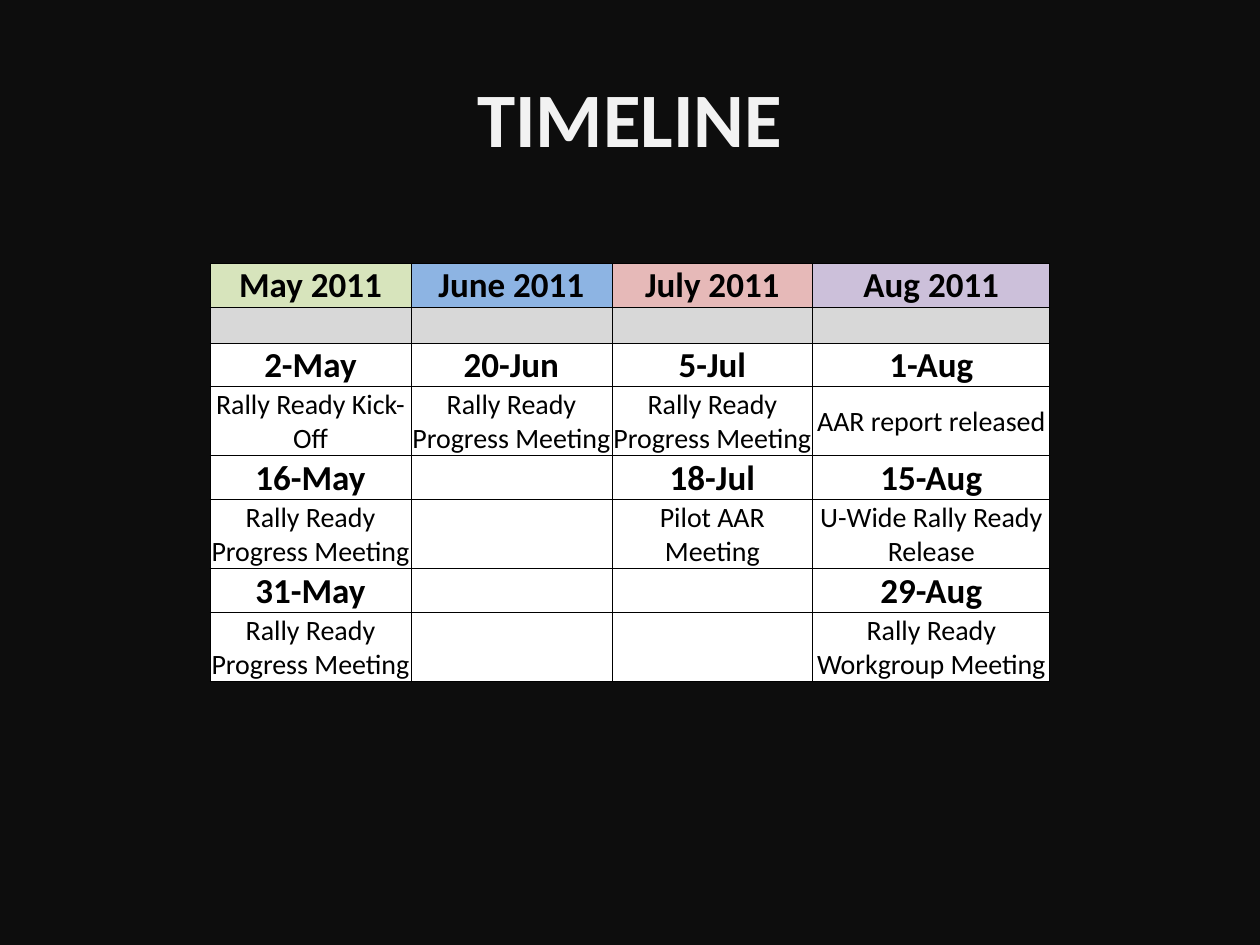
"""Build a timeline slide: a title above a four-month meeting table."""
from dataclasses import dataclass

from lxml.etree import SubElement
from pptx import Presentation
from pptx.dml.color import RGBColor
from pptx.enum.text import MSO_ANCHOR, PP_ALIGN
from pptx.oxml.ns import qn
from pptx.util import Emu, Pt

TITLE = "TIMELINE"
MEETING = "Rally Ready Progress Meeting"
MONTHS = [
    ("May 2011", "D7E4BC"),
    ("June 2011", "8DB4E3"),
    ("July 2011", "E6B9B8"),
    ("Aug 2011", "CCC0DA"),
]
EVENTS = [
    (["2-May", "20-Jun", "5-Jul", "1-Aug"],
     ["Rally Ready Kick-Off", MEETING, MEETING, "AAR report released"]),
    (["16-May", "", "18-Jul", "15-Aug"],
     [MEETING, "", "Pilot AAR Meeting", "U-Wide Rally Ready Release"]),
    (["31-May", "", "", "29-Aug"],
     [MEETING, "", "", "Rally Ready Workgroup Meeting"]),
]

SLIDE_SIZE = (1260, 945)
TITLE_BOX = (63, 38, 1134, 157)
TABLE_ORIGIN = (210, 263)
COLUMN_WIDTHS = [201, 201, 201, 237]
HEADING_HEIGHT, SPACER_HEIGHT, EVENT_HEIGHT = 44, 36, 69
CELL_FORMAT = {"margin_left": 1, "margin_right": 1, "margin_top": 1, "margin_bottom": 0}


@dataclass(frozen=True)
class Theme:
    font: str = "Calibri"
    background: str = "0D0D0D"
    title: str = "F2F2F2"
    ink: str = "000000"
    spacer: str = "D8D8D8"
    paper: str = "FFFFFF"
    title_size: int = 44
    heading_size: int = 20
    event_size: int = 16
    border_width: float = 0.5


THEME = Theme()


def px(length):
    return Emu(round(length * 914400 / 126))


def paint(fill, color):
    fill.solid()
    fill.fore_color.rgb = RGBColor.from_string(color)


def write(frame, text, size, color, bold):
    paragraph = frame.paragraphs[0]
    paragraph.alignment = PP_ALIGN.CENTER
    if not text:
        SubElement(paragraph._p, qn("a:endParaRPr"), sz=str(size * 100))
        return
    run = paragraph.add_run()
    run.text = text
    font_format = {"name": THEME.font, "size": Pt(size), "bold": bold}
    for name, value in font_format.items():
        setattr(run.font, name, value)
    run.font.color.rgb = RGBColor.from_string(color)


def add_borders(cell):
    properties = cell._tc.get_or_add_tcPr()
    for side in ("lnL", "lnR", "lnT", "lnB"):
        line = SubElement(properties, qn(f"a:{side}"), w=str(Pt(THEME.border_width)))
        fill = SubElement(line, qn("a:solidFill"))
        SubElement(fill, qn("a:srgbClr"), val=THEME.ink)


def add_title(slide):
    shape = slide.shapes.add_textbox(*map(px, TITLE_BOX))
    frame = shape.text_frame
    frame.word_wrap = True
    frame.vertical_anchor = MSO_ANCHOR.MIDDLE
    write(frame, TITLE, THEME.title_size, THEME.title, True)


def table_rows():
    count = len(MONTHS)
    months, colors = zip(*MONTHS)
    blank, paper = [""] * count, [THEME.paper] * count
    rows = [
        (months, colors, HEADING_HEIGHT, True),
        (blank, [THEME.spacer] * count, SPACER_HEIGHT, False),
    ]
    for dates, events in EVENTS:
        rows.append((dates, paper, HEADING_HEIGHT, True))
        rows.append((events, paper, EVENT_HEIGHT, False))
    return rows


def add_timeline(slide):
    rows = table_rows()
    size = (sum(COLUMN_WIDTHS), sum(row[2] for row in rows))
    table = slide.shapes.add_table(
        len(rows), len(MONTHS), *map(px, TABLE_ORIGIN + size)).table
    for name in ("first_row", "horz_banding"):
        setattr(table, name, False)
    for column, width in zip(table.columns, COLUMN_WIDTHS):
        column.width = px(width)
    for row, (texts, colors, height, heading) in zip(table.rows, rows):
        row.height = px(height)
        for cell, text, color in zip(row.cells, texts, colors):
            for name, value in CELL_FORMAT.items():
                setattr(cell, name, px(value))
            cell.vertical_anchor = MSO_ANCHOR.MIDDLE
            add_borders(cell)
            paint(cell.fill, color)
            text_size = THEME.heading_size if heading else THEME.event_size
            write(cell.text_frame, text, text_size, THEME.ink, heading)


def main():
    presentation = Presentation()
    presentation.slide_width, presentation.slide_height = map(px, SLIDE_SIZE)
    slide = presentation.slides.add_slide(presentation.slide_layouts[6])
    paint(slide.background.fill, THEME.background)
    add_title(slide)
    add_timeline(slide)
    presentation.save("out.pptx")


if __name__ == "__main__":
    main()
